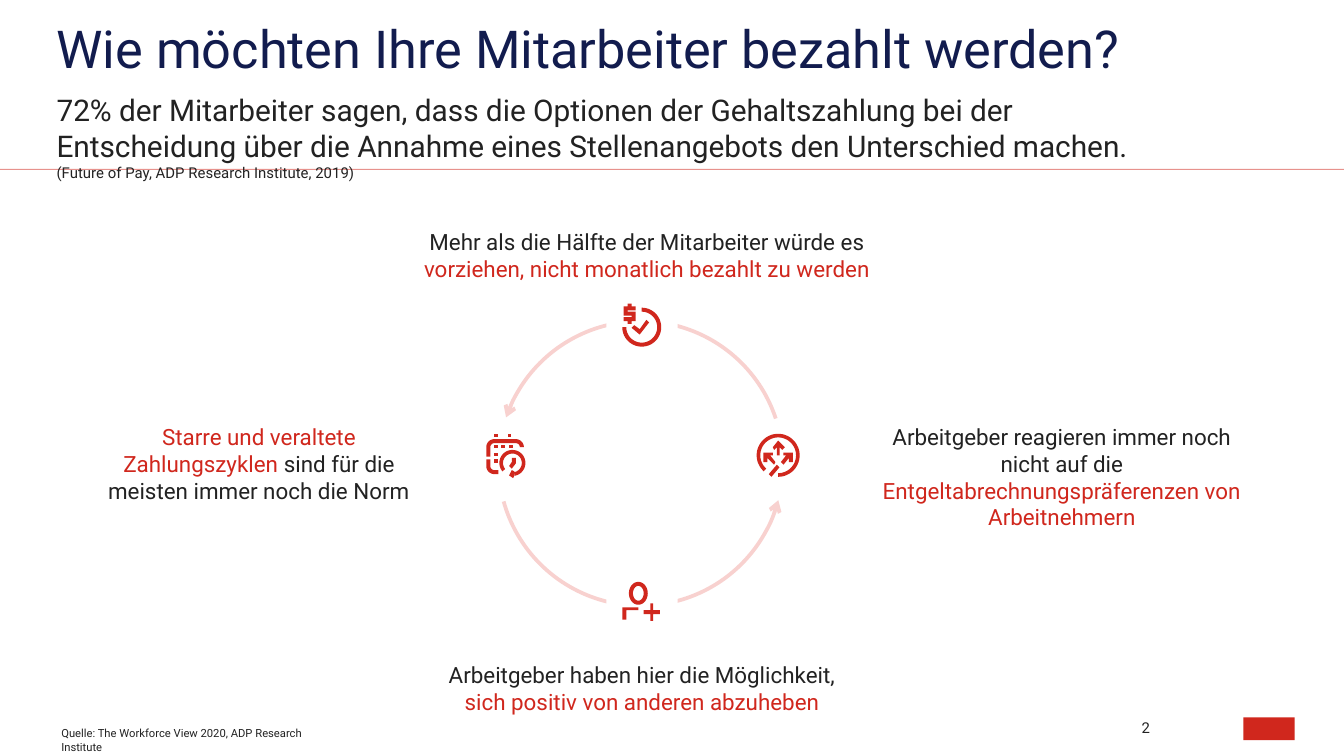
from dataclasses import dataclass
from math import cos, radians, sin

from lxml import etree
from pptx import Presentation
from pptx import util as u
from pptx.dml.color import RGBColor
from pptx.enum import shapes, text
from pptx.oxml import ns

Cm = u.Cm
Point = tuple[float, float]
Outline = list[Point]


@dataclass(frozen=True)
class Theme:
    font: str = "Roboto"
    navy: str = "121C4E"
    ink: str = "222222"
    red: str = "D0271D"
    pink: str = "F8D1CF"
    white: str = "FFFFFF"
    title: int = 28
    lead: int = 16
    label: int = 12
    small: int = 8
    note: int = 6


@dataclass(frozen=True)
class Box:
    left: float
    top: float
    width: float
    height: float

    def lengths(self) -> tuple[Cm, ...]:
        return tuple(Cm(v) for v in (self.left, self.top, self.width, self.height))


@dataclass(frozen=True)
class Run:
    wording: str
    color: str
    size: float


@dataclass(frozen=True)
class Label:
    box: Box
    runs: list[Run]


@dataclass(frozen=True)
class Icon:
    left: float
    top: float
    outlines: list[Outline]  # in hundredths of 2.54 cm from the icon's corner


THEME = Theme()


def rgb(color: str) -> RGBColor:
    return RGBColor.from_string(color)


def add_xml(parent, tag: str, **attributes: str):
    return etree.SubElement(parent, ns.qn(tag), attributes)


# --- Drawing ---
def write(slide, box: Box, runs: list[Run], *, align=text.PP_ALIGN.LEFT,
          anchor=text.MSO_ANCHOR.TOP, inset: bool = True, wrap: bool = True,
          after: float = 0, fill: str | None = None) -> None:
    area = slide.shapes.add_textbox(*box.lengths())
    if fill:
        area.fill.solid()
        area.fill.fore_color.rgb = rgb(fill)
    frame = area.text_frame
    frame.word_wrap = wrap
    frame.vertical_anchor = anchor
    if not inset:
        frame.margin_left = frame.margin_right = frame.margin_top = frame.margin_bottom = 0
    paragraph = frame.paragraphs[0]
    paragraph.alignment = align
    paragraph.space_after = u.Pt(after)
    for part in runs:
        run = paragraph.add_run()
        run.text = part.wording
        run.font.name = THEME.font
        run.font.size = u.Pt(part.size)
        run.font.color.rgb = rgb(part.color)


def paint(shape, color: str) -> None:
    shape.fill.solid()
    shape.fill.fore_color.rgb = rgb(color)
    shape.line.fill.background()
    shape.shadow.inherit = False


def draw_block(slide, box: Box, color: str) -> None:
    paint(slide.shapes.add_shape(shapes.MSO_SHAPE.RECTANGLE, *box.lengths()), color)


def draw_divider(slide, top: float, width: float) -> None:
    divider = slide.shapes.add_connector(
        shapes.MSO_CONNECTOR.STRAIGHT, 0, Cm(top), Cm(width), Cm(top))
    divider.line.width = u.Pt(0.5)
    divider.line.color.rgb = rgb(THEME.red)
    color = divider.line._ln.find(".//" + ns.qn("a:srgbClr"))
    add_xml(color, "a:alpha", val="50000")
    add_xml(divider._element.spPr, "a:effectLst")


def draw_arc(slide, box: Box, rotation: float, start: float, end: float) -> None:
    arc = slide.shapes.add_shape(shapes.MSO_SHAPE.ARC, *box.lengths())
    arc.rotation = rotation
    for index, angle in enumerate((start, end)):
        arc.adjustments[index] = angle * 0.6  # 60000 units a degree, over 100000
    arc.fill.background()
    arc.line.color.rgb = rgb(THEME.pink)
    arc.line.width = u.Pt(2)
    arc.shadow.inherit = False
    add_xml(arc.line._ln, "a:headEnd", type="arrow")


def draw_icon(slide, icon: Icon) -> None:
    group = slide.shapes.add_group_shape()
    for outline in icon.outlines:
        fine = [(round(x * 100), round(y * 100)) for x, y in outline]
        builder = group.shapes.build_freeform(*fine[0], scale=Cm(2.54) / 10000)
        builder.add_line_segments(fine[1:], close=True)
        paint(builder.convert_to_shape(Cm(icon.left), Cm(icon.top)), THEME.red)


# --- Icon geometry: angles run clockwise from the right ---
def sweep(x: float, y: float, rx: float, ry: float, start: float, end: float) -> Outline:
    steps = max(8, int(abs(end - start) / 6))
    angles = [radians(start + (end - start) * i / steps) for i in range(steps + 1)]
    return [(x + rx * cos(a), y + ry * sin(a)) for a in angles]


def band(x: float, y: float, rx: float, ry: float, thick: float,
         start: float, end: float) -> Outline:
    return (sweep(x, y, rx, ry, start, end)
            + sweep(x, y, rx - thick, ry - thick, end, start))


def square(x: float, y: float, side: float = 2.7) -> Outline:
    return [(x, y), (x + side, y), (x + side, y + side), (x, y + side)]


PAY = Icon(11.76, 5.74, [
    [(10, 5), (10, 2), (7, 2), (7, 0), (4, 0), (4, 2), (1, 2), (1, 9), (7, 9), (7, 10),
     (1, 10), (1, 13), (4, 13), (4, 15), (7, 15), (7, 13), (10, 13), (10, 6), (4, 6), (4, 5)],
    band(14.5, 17.5, 14.5, 14.5, 3, -90, 180),
    [(13, 23), (7, 18), (9, 16), (13, 19), (18, 12), (20, 14)],
])
HIRE = Icon(11.76, 11, [
    band(12, 8.5, 7, 8.5, 3, 0, 360),
    [(3, 21), (12, 21), (12, 19), (0, 19), (0, 28), (3, 28)],
    [(16, 24), (21, 24), (21, 29), (23, 29), (23, 24), (28, 24),
     (28, 21), (23, 21), (23, 16), (21, 16), (21, 21), (16, 21)],
])
CALENDAR = Icon(9.19, 8.2, [
    *(square(x, y) for x, y in
      [(6, 0), (16, 0), (6, 8), (11, 8), (17, 8), (6, 14), (6, 19)]),
    [(0, 17), *sweep(6, 10, 6, 6, 180, 270), *sweep(22, 10, 6, 6, 270, 360),
     *sweep(22, 10, 3, 3, 360, 270), *sweep(6, 10, 3, 3, 270, 180), (3, 17)],
    [(0, 19), *sweep(6, 24, 6, 6, 180, 90), (9, 30),
     (9, 27), *sweep(6, 24, 3, 3, 90, 180), (3, 19)],
    band(19.5, 21.7, 9.7, 9.7, 2.7, 140, 440),
    [(21, 28), (19, 27), (17, 31), (20, 33), (21, 31)],
    [(22, 18), (19, 18), (19, 21), (17, 24), (19, 26), (22, 22)],
])
CHOICE = Icon(14.3, 8.2, [
    band(16, 16, 16, 16, 2.7, 132, 450),
    [(12, 10), (13, 12), (15, 10), (15, 16), (17, 16), (17, 10), (19, 12), (21, 10), (16, 5)],
    [(11, 32), (17, 25), (15, 23), (9, 30)],
    [(27, 21), (27, 14), (20, 14), (20, 16), (22, 16), (18, 21), (20, 23), (24, 18), (24, 21)],
    [(5, 21), (8, 21), (8, 18), (13, 23), (14, 21), (10, 16), (12, 16), (12, 14), (5, 14)],
])


def plain(wording: str, size: float = THEME.label) -> Run:
    return Run(wording, THEME.ink, size)


def accent(wording: str) -> Run:
    return Run(wording, THEME.red, THEME.label)


LABELS = [
    Label(Box(7.44, 4.19, 9.58, 1.78), [plain("Mehr als die Hälfte der Mitarbeiter würde es "),
                                        accent("vorziehen, nicht monatlich bezahlt zu werden")]),
    Label(Box(1.3, 7.87, 7.19, 2.31), [accent("Starre und veraltete Zahlungszyklen"),
                                       plain(" sind für die meisten immer noch die Norm")]),
    Label(Box(16.31, 7.87, 7.52, 2.31), [plain("Arbeitgeber reagieren immer noch nicht auf die "),
                                         accent("Entgeltabrechnungspräferenzen von Arbeitnehmern")]),
    Label(Box(7.92, 12.37, 8.43, 2.31), [plain("Arbeitgeber haben hier die Möglichkeit, "),
                                         accent("sich positiv von anderen abzuheben")]),
]


def main() -> None:
    deck = Presentation()
    deck.slide_width, deck.slide_height = Cm(25.4), Cm(14.29)
    slide = deck.slides.add_slide(deck.slide_layouts[6])
    center = text.PP_ALIGN.CENTER

    # Frame: emblem block and divider
    draw_block(slide, Box(23.5, 13.56, 0.97, 0.43), THEME.red)
    draw_divider(slide, 3.2, 25.4)

    # Heading, page number and source
    write(slide, Box(1.07, 0.3, 20.83, 1.19),
          [Run("Wie möchten Ihre Mitarbeiter bezahlt werden?", THEME.navy, THEME.title)], inset=False)
    write(slide, Box(21.49, 13.59, 0.33, 0.33), [plain("2", THEME.small)], align=center,
          anchor=text.MSO_ANCHOR.MIDDLE, inset=False, wrap=False)
    write(slide, Box(1.07, 1.73, 20.83, 1.37), [
        plain("72% der Mitarbeiter sagen, dass die Optionen der Gehaltszahlung bei der Entscheidung "
              "über die Annahme eines Stellenangebots den Unterschied machen. ", THEME.lead),
        plain("(Future of Pay, ADP Research Institute, 2019)", THEME.small)], inset=False, after=12)
    write(slide, Box(0.91, 13.61, 5.72, 0.51),
          [plain("Quelle: The Workforce View 2020, ADP Research Institute", THEME.note)],
          fill=THEME.white)

    # Cycle: labels, arcs, gaps for the icons, icons
    for label in LABELS:
        write(slide, label.box, label.runs, align=center, after=12)
    circle = Box(9.42, 6.07, 5.38, 5.38)
    draw_arc(slide, circle, 270, 288.9, 71.6)
    draw_arc(slide, circle, 90, 285, 74.5)
    for top in (5.92, 11.2):
        draw_block(slide, Box(11.46, top, 1.35, 0.38), THEME.white)
    for icon in (PAY, HIRE, CALENDAR, CHOICE):
        draw_icon(slide, icon)

    deck.save("out.pptx")


if __name__ == "__main__":
    main()
